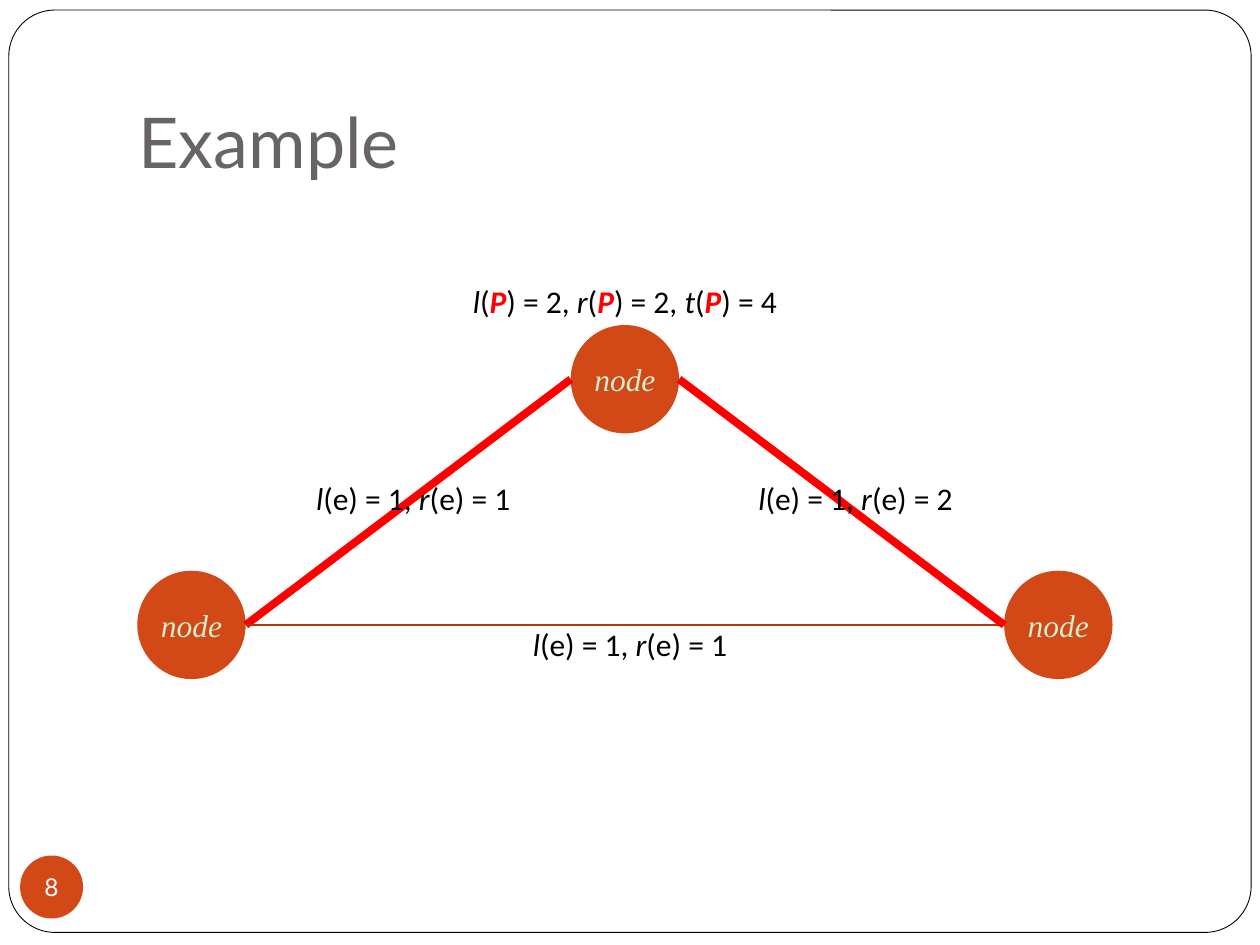
from itertools import groupby

from lxml import etree
from pptx import Presentation
from pptx.dml.color import RGBColor
from pptx.enum import shapes, text
from pptx.oxml.ns import qn
from pptx.util import Inches, Pt

HUES = {
    "page": "FFFFFF", "ink": "000000", "title": "696464", "node": "D34817",
    "pale": "C7EDCC", "path": "FF0000", "edge": "B1360B",
}
# Letters with a format of their own in the formulas
VARS = {c: {"italic": True} for c in "lrt"}
VARS["P"] = {"italic": True, "bold": True, "hue": "path"}


def hue(name):
    return RGBColor.from_string(HUES[name])


def write(frame, words, size=18, face="Calibri", color="ink", italic=False,
          align=text.PP_ALIGN.CENTER, marks=None):
    """Fill a text frame; letters found in marks get their own format."""
    para = frame.paragraphs[0]
    para.alignment = align
    marks = marks or {}
    for style, chars in groupby(words, lambda c: marks.get(c, {})):
        run = para.add_run()
        run.text = "".join(chars)
        font = run.font
        font.size, font.name = Pt(size), face
        font.italic = style.get("italic", italic)
        font.bold = style.get("bold", False)
        font.color.rgb = hue(style.get("hue", color))


class Deck:
    def __init__(self, prs):
        self.slide = prs.slides.add_slide(prs.slide_layouts[5])
        self.items = self.slide.shapes
        fill = self.slide.background.fill
        fill.solid()
        fill.fore_color.rgb = hue("page")

    def frame(self, x, y, w, h):
        box = self.items.add_shape(shapes.MSO_SHAPE.ROUNDED_RECTANGLE,
                                   Inches(x), Inches(y), Inches(w), Inches(h))
        box.adjustments[0] = 0.05
        box.shadow.inherit = False
        box.fill.background()
        box.line.color.rgb = hue("ink")
        box.line.width = Pt(0.5)

    def title(self, words, x, y, w, h):
        head = self.items.title
        head.left, head.top = Inches(x), Inches(y)
        head.width, head.height = Inches(w), Inches(h)
        body = head.text_frame
        body.auto_size = text.MSO_AUTO_SIZE.NONE
        body.vertical_anchor = text.MSO_ANCHOR.BOTTOM
        body.margin_bottom = Inches(0.1)
        write(body, words, size=40, face="Lato", color="title",
              align=text.PP_ALIGN.LEFT)

    def disc(self, words, x, y, d, **look):
        dot = self.items.add_shape(shapes.MSO_SHAPE.OVAL, Inches(x), Inches(y),
                                   Inches(d), Inches(d))
        dot.shadow.inherit = False
        dot.fill.solid()
        dot.fill.fore_color.rgb = hue("node")
        dot.line.fill.background()
        body = dot.text_frame
        body.word_wrap = False
        body.vertical_anchor = text.MSO_ANCHOR.MIDDLE
        body.margin_left = body.margin_right = 0
        body.margin_top = body.margin_bottom = 0
        write(body, words, **look)

    def edge(self, start, end, color, width):
        line = self.items.add_connector(shapes.MSO_CONNECTOR.STRAIGHT,
                                        *map(Inches, start + end))
        line.line.color.rgb = hue(color)
        line.line.width = Pt(width)
        etree.SubElement(line._element.spPr, qn("a:effectLst"))

    def label(self, words, x, y, w, h=0.4):
        box = self.items.add_textbox(Inches(x), Inches(y), Inches(w), Inches(h))
        box.text_frame.word_wrap = True
        write(box.text_frame, words, marks=VARS)


def main():
    prs = Presentation()
    prs.slide_width, prs.slide_height = Inches(10), Inches(7.5)
    deck = Deck(prs)

    # Page frame, title and slide number
    deck.frame(0.07, 0.08, 9.86, 7.32)
    deck.title("Example", 1, 0.3, 8.5, 1.25)
    deck.disc("8", 0.16, 6.79, 0.5, size=14, face="Lato", color="page")

    # Nodes: left, top and right corner of the triangle
    size, low, high = 0.86, 4.53, 2.58
    left, mid, right = (1.09 + 3.44 * i for i in range(3))
    for x, y in ((left, low), (mid, high), (right, low)):
        deck.disc("node", x, y, size, face="Times New Roman", color="pale",
                  italic=True)

    # Edges run from side to side of the nodes; the path is the thick one
    half = size / 2
    start, end = (left + size, low + half), (right, low + half)
    deck.edge(start, (mid, high + half), "path", 4.5)
    deck.edge(start, end, "edge", 0.75)
    deck.edge((mid + size, high + half), end, "path", 4.5)

    # Formulas
    deck.label("l(P) = 2, r(P) = 2, t(P) = 4", 3.28, 2.19, 3.36)
    for cost, x, y in ((1, 3.83, 4.91), (1, 2.11, 3.75), (2, 5.62, 3.75)):
        deck.label(f"l(e) = 1, r(e) = {cost}", x, y, 2.34)

    prs.save("out.pptx")


if __name__ == "__main__":
    main()
